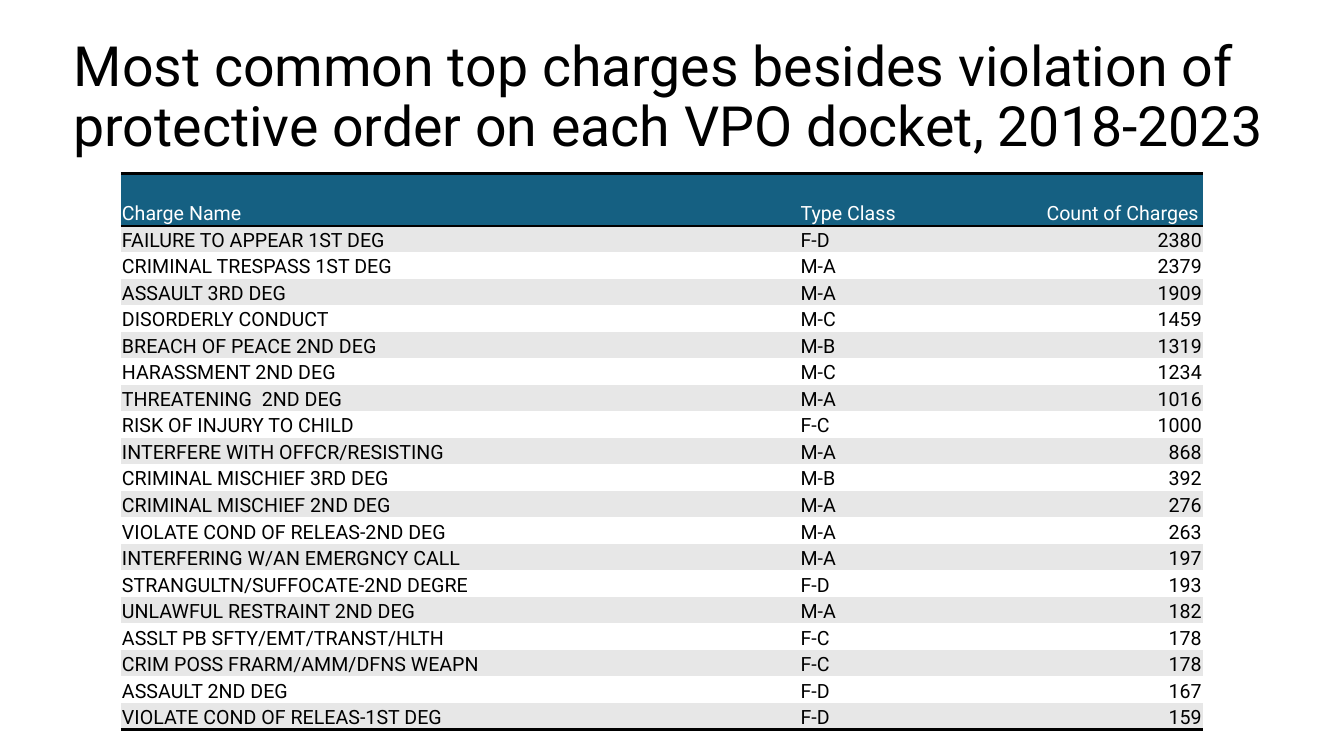
from lxml import etree
from pptx import Presentation
from pptx.dml.color import RGBColor
from pptx.enum.text import MSO_ANCHOR, MSO_AUTO_SIZE, PP_ALIGN
from pptx.oxml.ns import qn
from pptx.util import Inches, Pt

LEFT, RIGHT = PP_ALIGN.LEFT, PP_ALIGN.RIGHT
MIDDLE, BOTTOM = MSO_ANCHOR.MIDDLE, MSO_ANCHOR.BOTTOM
NO_FIT = MSO_AUTO_SIZE.NONE
BLACK = RGBColor(0x00, 0x00, 0x00)
WHITE = RGBColor(0xFF, 0xFF, 0xFF)
TEAL = RGBColor(0x15, 0x60, 0x82)
GREY = RGBColor(0xE7, 0xE7, 0xE7)
PLAIN_STYLE = "{2D5ABB26-0587-4C30-8999-92F81FD0307C}"

TITLE = ("Most common top charges besides violation of protective order "
         "on each VPO docket, 2018-2023")
HEADS = ("Charge Name", "Type Class", "Count of Charges")
CHARGES = [
    ("FAILURE TO APPEAR 1ST DEG", "F-D", 2380),
    ("CRIMINAL TRESPASS 1ST DEG", "M-A", 2379),
    ("ASSAULT 3RD DEG", "M-A", 1909),
    ("DISORDERLY CONDUCT", "M-C", 1459),
    ("BREACH OF PEACE 2ND DEG", "M-B", 1319),
    ("HARASSMENT 2ND DEG", "M-C", 1234),
    ("THREATENING  2ND DEG", "M-A", 1016),
    ("RISK OF INJURY TO CHILD", "F-C", 1000),
    ("INTERFERE WITH OFFCR/RESISTING", "M-A", 868),
    ("CRIMINAL MISCHIEF 3RD DEG", "M-B", 392),
    ("CRIMINAL MISCHIEF 2ND DEG", "M-A", 276),
    ("VIOLATE COND OF RELEAS-2ND DEG", "M-A", 263),
    ("INTERFERING W/AN EMERGNCY CALL", "M-A", 197),
    ("STRANGULTN/SUFFOCATE-2ND DEGRE", "F-D", 193),
    ("UNLAWFUL RESTRAINT 2ND DEG", "M-A", 182),
    ("ASSLT PB SFTY/EMT/TRANST/HLTH", "F-C", 178),
    ("CRIM POSS FRARM/AMM/DFNS WEAPN", "F-C", 178),
    ("ASSAULT 2ND DEG", "F-D", 167),
    ("VIOLATE COND OF RELEAS-1ST DEG", "F-D", 159),
]


def assign(item, values):
    for name, value in values.items():
        setattr(item, name, value)


class Deck:
    font = "Roboto"
    cell_format = {
        "margin_left": Inches(0.01), "margin_right": Inches(0.01),
        "margin_top": Inches(0.01), "margin_bottom": 0,
        "vertical_anchor": BOTTOM,
    }

    def __init__(self):
        self.deck = Presentation()
        self.deck.slide_width = Inches(13.33)
        self.deck.slide_height = Inches(7.5)
        self.slide = self.deck.slides.add_slide(self.deck.slide_layouts[5])

    def text(self, frame, words, size, color, align=LEFT):
        frame.text = words
        para = frame.paragraphs[0]
        para.alignment = align
        font = para.runs[0].font
        assign(font, {"name": self.font, "size": Pt(size)})
        font.color.rgb = color
        return para

    def title(self, words, left, top, width, height):
        shape = self.slide.shapes.title
        assign(shape, {"left": Inches(left), "top": Inches(top),
                       "width": Inches(width), "height": Inches(height)})
        frame = shape.text_frame
        assign(frame, {"word_wrap": True, "auto_size": NO_FIT,
                       "vertical_anchor": MIDDLE})
        self.text(frame, words, 39.6, BLACK).line_spacing = 0.9

    def border(self, cell, side):
        """Rule one side of a cell ("T" or "B"); call before filling it."""
        props = cell._tc.get_or_add_tcPr()
        line = etree.SubElement(props, qn(f"a:ln{side}"), w=str(Pt(2)))
        fill = etree.SubElement(line, qn("a:solidFill"))
        etree.SubElement(fill, qn("a:srgbClr"), val=str(BLACK))

    def cell(self, cell, words, fill, color, align, sides):
        assign(cell, self.cell_format)
        for side in sides:
            self.border(cell, side)
        cell.fill.solid()
        cell.fill.fore_color.rgb = fill
        self.text(cell.text_frame, words, 14, color, align)

    def table(self, heads, rows, left, top, widths, head_high, body_high):
        frame = self.slide.shapes.add_table(
            len(rows) + 1, len(heads), Inches(left), Inches(top),
            Inches(sum(widths)), Inches(head_high + body_high))
        table = frame.table
        table.horz_banding = False
        table._tbl.tblPr.find(qn("a:tableStyleId")).text = PLAIN_STYLE
        for column, width in zip(table.columns, widths):
            column.width = Inches(width)
        for i, values in enumerate([heads, *rows]):
            head = i == 0
            table.rows[i].height = Inches(
                head_high if head else body_high / len(rows))
            fill = TEAL if head else GREY if i % 2 else WHITE
            sides = "TB" if head else "B" if i == len(rows) else ""
            for j, value in enumerate(values):
                align = RIGHT if isinstance(value, int) else LEFT
                self.cell(table.cell(i, j), str(value), fill,
                          WHITE if head else BLACK, align, sides)


def main():
    deck = Deck()
    deck.title(TITLE, 0.63, 0.25, 12.1, 1.45)
    deck.table(HEADS, CHARGES, 1.2, 1.72, (6.73, 2.44, 1.56), 0.52, 5)
    deck.deck.save("out.pptx")


if __name__ == "__main__":
    main()
